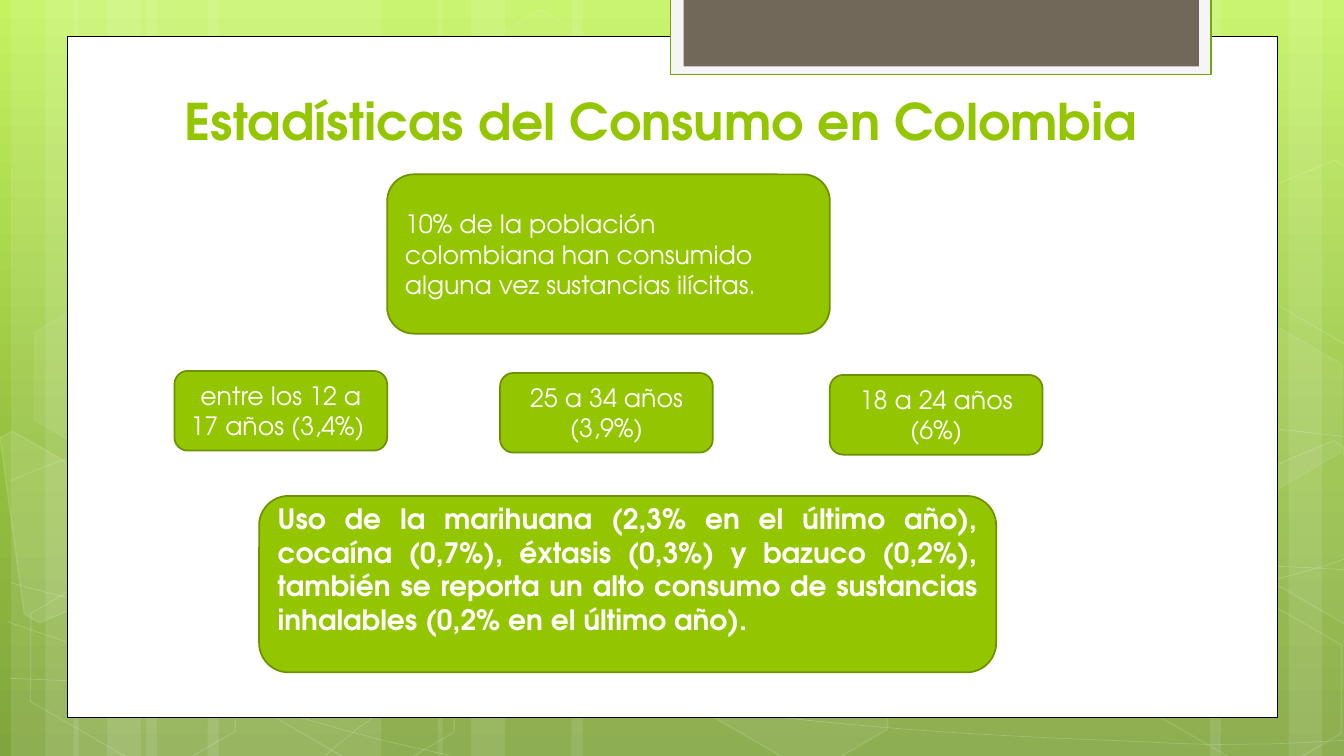
from copy import deepcopy
from dataclasses import dataclass
from typing import Optional

from lxml.etree import SubElement
from pptx import Presentation
from pptx.dml.color import RGBColor
from pptx.enum.shapes import MSO_SHAPE as Preset
from pptx.enum.text import MSO_ANCHOR as Anchor, PP_ALIGN as Align
from pptx.oxml.ns import qn
from pptx.util import Inches, Pt

WHITE = RGBColor(0xFF, 0xFF, 0xFF)
BLACK = RGBColor(0x00, 0x00, 0x00)
GREEN = RGBColor(0x94, 0xC6, 0x00)
DARK_GREEN = RGBColor(0x6D, 0x92, 0x00)
TAB_GREEN = RGBColor(0x74, 0xA5, 0x10)
PALE_GRAY = RGBColor(0xF5, 0xF5, 0xF5)
BROWN = RGBColor(0x71, 0x68, 0x5A)
BACKGROUND = [
    (0, RGBColor(0xC3, 0xF3, 0x5F)),
    (0.62, RGBColor(0x93, 0xBF, 0x3F)),
    (1, RGBColor(0x81, 0xA5, 0x3E)),
]
FONT = "TeX Gyre Adventor"
WIDTH, HEIGHT = 13.33, 7.5
Point = tuple[float, float]


@dataclass(frozen=True)
class Style:
    fill: Optional[RGBColor] = None
    fill_alpha: int = 100
    line: Optional[RGBColor] = None
    line_width: float = 1
    line_alpha: int = 100


@dataclass(frozen=True)
class Hexagon:
    left: float
    top: float
    style: Style


@dataclass(frozen=True)
class Fragment:
    points: list[Point]
    style: Style


@dataclass(frozen=True)
class Card:
    left: float
    top: float
    width: float
    height: float
    text: str
    align: Align = Align.CENTER
    size: int = 18
    bold: bool = False
    bottom_margin: float = 0.05


def glass(fill_alpha: int, line_alpha: int) -> Style:
    return Style(WHITE if fill_alpha else None, fill_alpha, WHITE, 1, line_alpha)


BAND = Style(WHITE, 10)
STRAND = Style(line=WHITE, line_width=0.5, line_alpha=20)
CARD = Style(GREEN, line=DARK_GREEN, line_width=1.25)

BANDS = [
    (1.45, 2.33), (0.11, 0.67), (0.45, 1.11),
    (2.06, 2.33), (0.73, 0.67), (1.06, 1.11),
    (9.78, 2.33), (12.78, 0.67), (12, 1.11),
    (5.67, 4.11), (4.34, 0.67), (4.67, 1.11),
]
CURVES = [
    [(0.1, 6.73), (0.82, 6.76), (1.54, 6.79), (2.54, 6.78), (3.54, 6.77), (4.77, 6.75),
     (6.1, 6.65), (7.44, 6.55), (9.33, 6.36), (10.55, 6.17), (11.78, 5.98), (13.03, 5.68),
     (13.43, 5.51)],
    [(0.1, 4.77), (0.48, 4.61), (0.86, 4.46), (1.62, 4.31), (2.38, 4.16), (3.45, 3.94),
     (4.63, 3.87), (5.82, 3.8), (7.25, 3.79), (8.72, 3.87), (10.19, 3.95), (12.63, 4.26),
     (13.43, 4.34)],
    [(0.08, 6.17), (1.69, 6.72), (3.3, 7.27), (4.46, 7.49)],
    [(0.1, 5.78), (0.51, 5.89), (0.93, 6), (1.71, 6.16), (2.48, 6.31), (3.64, 6.56),
     (4.75, 6.73), (5.86, 6.9), (7.27, 7.08), (8.37, 7.18), (9.48, 7.29), (10.66, 7.33),
     (11.37, 7.36), (12.07, 7.4), (12.25, 7.38), (12.6, 7.38), (12.94, 7.37), (13.19, 7.35),
     (13.43, 7.34)],
    [(3.23, 7.49), (3.47, 7.29), (3.7, 7.09), (4.03, 6.91), (4.35, 6.73), (4.8, 6.53),
     (5.17, 6.39), (5.54, 6.25), (5.77, 6.19), (6.26, 6.09), (6.75, 5.99), (7.65, 5.85),
     (8.11, 5.78), (8.58, 5.71), (8.65, 5.71), (9.07, 5.69), (9.48, 5.66), (10.13, 5.63),
     (10.59, 5.62), (11.05, 5.61), (11.82, 5.62), (11.82, 5.62), (12.1, 5.62), (12.4, 5.62),
     (12.7, 5.62), (12.95, 5.63), (13.17, 5.64), (13.29, 5.65), (13.41, 5.66), (13.37, 5.65),
     (13.41, 5.66)],
]
LATTICE = [
    Hexagon(4.45, 0.36, glass(4, 8)),
    Hexagon(6.62, 5.89, glass(6, 12)),
    Fragment([(0, 4.34), (0.13, 4.28), (1.15, 4.87), (1.27, 5.81), (0.39, 6.18), (0.24, 6.09)],
             glass(10, 12)),
    Hexagon(0.15, 5.91, glass(0, 12)),
    Hexagon(0.19, 3.12, glass(7, 8)),
    Hexagon(2.32, 5.92, glass(0, 12)),
    Hexagon(11.12, 5.93, glass(0, 12)),
    Hexagon(11.12, 3.14, glass(7, 8)),
    Fragment([(12.35, 4.74), (13.23, 4.37), (13.32, 4.43), (13.57, 6.25), (13.49, 6.28),
              (12.47, 5.69)], glass(4, 12)),
    Fragment([(12.35, 1.96), (13.23, 1.59), (13.34, 1.65), (13.57, 3.46), (13.49, 3.5),
              (12.47, 2.91)], glass(0, 12)),
]
PANELS = [
    (0.67, 0.36, 12, 6.76, Style(WHITE, line=BLACK, line_width=0.5)),
    (6.65, -0.02, 5.36, 0.76, Style(PALE_GRAY, line=TAB_GREEN, line_width=1.25)),
    (6.78, -0.02, 5.11, 0.68, Style(BROWN)),
]
CARDS = [
    Card(3.84, 1.73, 4.39, 1.58,
         "10% de la población colombiana han consumido alguna vez sustancias ilícitas.",
         Align.LEFT),
    Card(8.23, 3.72, 2.11, 0.79, "18 a 24 años (6%)"),
    Card(4.96, 3.7, 2.11, 0.79, "25 a 34 años (3,9%)"),
    Card(1.73, 3.68, 2.11, 0.79, "entre los 12 a 17 años (3,4%) "),
    Card(2.57, 4.92, 7.31, 1.75,
         "Uso de la marihuana (2,3% en el último año), cocaína (0,7%), éxtasis (0,3%) y bazuco "
         "(0,2%), también se reporta un alto consumo de sustancias inhalables (0,2% en el "
         "último año).", Align.JUSTIFY, 20, True, 0.35),
]


def paint(shape, style: Style) -> None:
    shape.shadow.inherit = False
    parts = [
        (shape.fill, style.fill, style.fill_alpha, "./a:solidFill/a:srgbClr"),
        (shape.line.fill, style.line, style.line_alpha, "./a:ln/a:solidFill/a:srgbClr"),
    ]
    for fill, color, alpha, query in parts:
        if color is None:
            fill.background()
            continue
        fill.solid()
        fill.fore_color.rgb = color
        if alpha < 100:
            tint = shape._element.spPr.xpath(query)[0]
            SubElement(tint, qn("a:alpha")).set("val", str(alpha * 1000))
    if style.line is not None:
        shape.line.width = Pt(style.line_width)


def add_preset(page, preset: Preset, left: float, top: float, width: float, height: float,
               style: Style):
    shape = page.shapes.add_shape(preset, *map(Inches, (left, top, width, height)))
    paint(shape, style)
    return shape


def add_outline(page, points: list[Point], style: Style, closed: bool):
    start, *rest = [(Inches(x), Inches(y)) for x, y in points]
    builder = page.shapes.build_freeform(*start)
    builder.add_line_segments(rest, close=closed)
    shape = builder.convert_to_shape()
    paint(shape, style)
    return shape


def add_curve(page, knots: list[Point], style: Style) -> None:
    shape = add_outline(page, knots, style, False)
    outline = shape._element.spPr.xpath(".//a:path")[0]
    segments = outline.findall(qn("a:lnTo"))
    for first in range(0, len(segments), 3):
        bend = SubElement(outline, qn("a:cubicBezTo"))
        for segment in segments[first:first + 3]:
            bend.append(segment[0])
            outline.remove(segment)


def write(box, text: str, align: Align, color: RGBColor, size: int, bold: bool,
          frame_format: dict) -> None:
    for name, value in {"word_wrap": True, **frame_format}.items():
        setattr(box.text_frame, name, value)
    para = box.text_frame.paragraphs[0]
    para.alignment = align
    span = para.add_run()
    span.text = text
    for name, value in {"name": FONT, "size": Pt(size), "bold": bold}.items():
        setattr(span.font, name, value)
    span.font.color.rgb = color


def paint_background(page) -> None:
    fill = page.background.fill
    fill.gradient()
    fill.gradient_angle = 270
    stop_list = page._element.xpath(".//a:gsLst")[0]
    stop_list.append(deepcopy(stop_list[-1]))
    for stop, (position, color) in zip(fill.gradient_stops, BACKGROUND):
        stop.position = position
        stop.color.rgb = color


def main() -> None:
    deck = Presentation()
    deck.slide_width, deck.slide_height = Inches(WIDTH), Inches(HEIGHT)
    page = deck.slides.add_slide(deck.slide_layouts[6])
    paint_background(page)
    for left, width in BANDS:
        add_preset(page, Preset.RECTANGLE, left, 0, width, HEIGHT, BAND)
    for knots in CURVES:
        add_curve(page, knots, STRAND)
    for item in LATTICE:
        if isinstance(item, Fragment):
            add_outline(page, item.points, item.style, True)
        else:
            hexagon = add_preset(page, Preset.HEXAGON, item.left, item.top, 2.34, 1.52, item.style)
            hexagon.adjustments[0] = 0.285
            hexagon.rotation = 30
    for left, top, width, height, style in PANELS:
        add_preset(page, Preset.RECTANGLE, left, top, width, height, style)
    title = page.shapes.add_textbox(*map(Inches, (1.73, 0.65, 9.68, 1.49)))
    write(title, "Estadísticas del Consumo en Colombia", Align.LEFT, GREEN, 36, True,
          {"vertical_anchor": Anchor.BOTTOM, "margin_bottom": Inches(0.65)})
    for card in CARDS:
        box = add_preset(page, Preset.ROUNDED_RECTANGLE, card.left, card.top, card.width,
                         card.height, CARD)
        write(box, card.text, card.align, WHITE, card.size, card.bold,
              {"vertical_anchor": Anchor.MIDDLE, "margin_bottom": Inches(card.bottom_margin)})
    deck.save("out.pptx")


if __name__ == "__main__":
    main()
